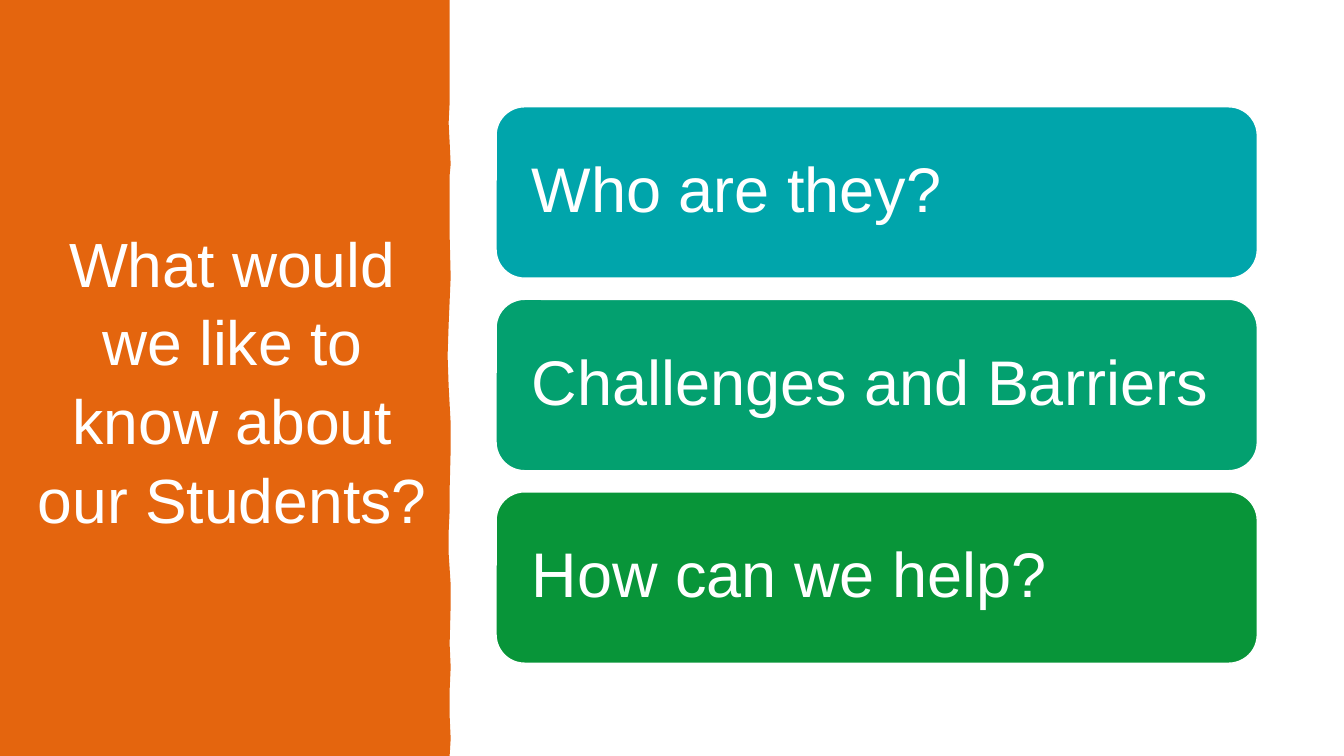
import pptx
import pptx.dml.color
import pptx.enum.shapes
import pptx.enum.text
import pptx.util

Inches = pptx.util.Inches
COLORS = {
    "white": "FFFFFF",
    "orange": "E4650E",
    "teal": "00A5AB",
    "sea_green": "03A06F",
    "green": "089539",
}
TOPICS = [
    ("Who are they?", "teal"),
    ("Challenges and Barriers", "sea_green"),
    ("How can we help?", "green"),
]
# Points (x, y) down the wavy right edge of the side panel
PANEL_EDGE = [
    (4.46, 0), (4.46, 0.63), (4.46, 1.02), (4.45, 1.22), (4.46, 1.41),
    (4.47, 1.63), (4.46, 1.74), (4.46, 2.33), (4.47, 2.75), (4.45, 3.22),
    (4.44, 3.53), (4.45, 3.83), (4.47, 4.2), (4.47, 4.46), (4.46, 4.86),
    (4.46, 5.07), (4.45, 5.28), (4.45, 5.49), (4.47, 5.8), (4.47, 6),
    (4.46, 6.39), (4.47, 6.62), (4.46, 6.85), (4.46, 7.1), (4.47, 7.33),
    (4.46, 7.5),
]


def rgb(name):
    return pptx.dml.color.RGBColor.from_string(COLORS[name])


def set_attributes(target, values):
    for name, value in values.items():
        setattr(target, name, value)


class SlideBuilder:
    font = "Arial"

    def __init__(self, presentation):
        self.slide = presentation.slides.add_slide(presentation.slide_layouts[5])

    def set_text(self, shape, text, size, alignment, spacing, insets):
        frame = shape.text_frame
        horizontal, vertical = insets
        set_attributes(frame, {
            "text": text,
            "word_wrap": True,
            "auto_size": pptx.enum.text.MSO_AUTO_SIZE.NONE,
            "vertical_anchor": pptx.enum.text.MSO_ANCHOR.MIDDLE,
            "margin_left": Inches(horizontal),
            "margin_right": Inches(horizontal),
            "margin_top": Inches(vertical),
            "margin_bottom": Inches(vertical),
        })
        paragraph = frame.paragraphs[0]
        set_attributes(paragraph, {"alignment": alignment, "line_spacing": spacing})
        font = paragraph.runs[0].font
        set_attributes(font, {"name": self.font, "size": pptx.util.Pt(size)})
        font.color.rgb = rgb("white")

    def set_fill(self, shape, color):
        shape.shadow.inherit = False
        shape.fill.solid()
        shape.fill.fore_color.rgb = rgb(color)

    def panel(self, edge, color):
        points = [(Inches(x), Inches(y)) for x, y in edge + [(0, 7.5)]]
        builder = self.slide.shapes.build_freeform(0, 0)
        builder.add_line_segments(points, close=True)
        shape = builder.convert_to_shape()
        self.set_fill(shape, color)
        shape.line.fill.background()

    def title(self, text, left, top, width, height):
        shape = self.slide.shapes.title
        set_attributes(shape, {
            "left": Inches(left), "top": Inches(top),
            "width": Inches(width), "height": Inches(height),
        })
        self.set_text(shape, text, 44.6, pptx.enum.text.PP_ALIGN.CENTER, 1.05, (0.1, 0.05))
        # Bring the title in front of the panel
        shape.element.getparent().append(shape.element)

    def card(self, text, color, left, top, width, height):
        shape = self.slide.shapes.add_shape(
            pptx.enum.shapes.MSO_SHAPE.ROUNDED_RECTANGLE,
            Inches(left), Inches(top), Inches(width), Inches(height))
        self.set_fill(shape, color)
        shape.line.color.rgb = rgb("white")
        shape.line.width = pptx.util.Pt(1)
        self.set_text(shape, text, 45, pptx.enum.text.PP_ALIGN.LEFT, 0.9, (0.27, 0.27))


def main():
    presentation = pptx.Presentation()
    presentation.slide_width = Inches(13.33)
    presentation.slide_height = Inches(7.5)
    builder = SlideBuilder(presentation)

    # Side panel with the title
    builder.panel(PANEL_EDGE, "orange")
    builder.title("What would we like to know about our Students?", 0.14, 0.7, 4.33, 6.11)

    # Topic cards, evenly stacked
    for index, (text, color) in enumerate(TOPICS):
        builder.card(text, color, 4.92, 1.06 + 1.91 * index, 7.55, 1.7)

    presentation.save("out.pptx")


if __name__ == "__main__":
    main()
